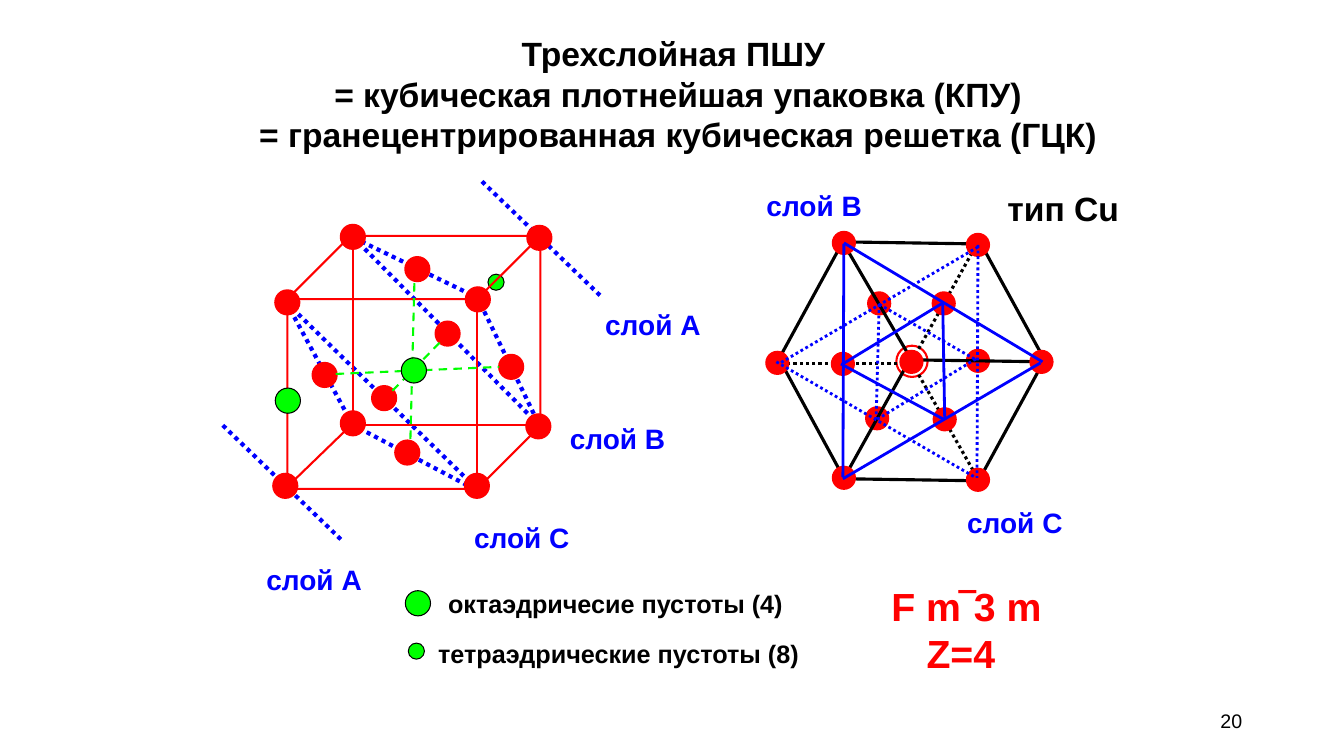
from dataclasses import dataclass

from lxml import etree
from pptx import Presentation
from pptx.dml.color import RGBColor
from pptx.enum.dml import MSO_LINE
from pptx.enum.shapes import MSO_CONNECTOR, MSO_SHAPE
from pptx.enum.text import MSO_ANCHOR, MSO_AUTO_SIZE, PP_ALIGN
from pptx.oxml.ns import qn
from pptx.util import Emu, Pt

ELLIPSE, CUBE = MSO_SHAPE.OVAL, MSO_SHAPE.CUBE
STRAIGHT = MSO_CONNECTOR.STRAIGHT
DOT, DASH = MSO_LINE.ROUND_DOT, MSO_LINE.DASH
CENTER, RIGHT = PP_ALIGN.CENTER, PP_ALIGN.RIGHT
TOP, MIDDLE = MSO_ANCHOR.TOP, MSO_ANCHOR.MIDDLE
GROW, FIXED = MSO_AUTO_SIZE.SHAPE_TO_FIT_TEXT, MSO_AUTO_SIZE.NONE
EMU_PER_PX = 9144


def px(n):
    return Emu(n * EMU_PER_PX)


@dataclass(frozen=True)
class Theme:
    font: str = "Arial"
    black: str = "000000"
    red: str = "FF0000"
    green: str = "00FF00"
    blue: str = "0000FF"
    formula: int = 28
    title: int = 24
    layer: int = 20
    legend: int = 18
    number: int = 14


class SlideBuilder:
    def __init__(self, s, theme):
        self.s = s
        self.theme = theme

    def outline(self, line, color, width, dash=None):
        line.color.rgb = RGBColor.from_string(color)
        line.width = Pt(width)
        if dash is not None:
            line.dash_style = dash

    def shape(self, kind, x, y, size, fill=None, line=None, width=1.5):
        sp = self.s.shapes.add_shape(kind, px(x), px(y), px(size), px(size))
        sp.shadow.inherit = False
        if fill:
            sp.fill.solid()
            sp.fill.fore_color.rgb = RGBColor.from_string(fill)
        else:
            sp.fill.background()
        if line:
            self.outline(sp.line, line, width)
        else:
            sp.line.fill.background()
        return sp

    def atoms(self, places, size):
        for x, y in places:
            self.shape(ELLIPSE, x, y, size, fill=self.theme.red)

    def void(self, x, y, size):
        self.shape(ELLIPSE, x, y, size, fill=self.theme.green, line=self.theme.black, width=0.75)

    def lines(self, ends, color, width, dash=None):
        for x1, y1, x2, y2 in ends:
            c = self.s.shapes.add_connector(STRAIGHT, px(x1), px(y1), px(x2), px(y2))
            self.outline(c.line, color, width, dash)
            etree.SubElement(c._element.spPr, qn("a:effectLst"))

    def text(self, text, x, y, w, h, *, size, color, bold=True, align=CENTER,
             anchor=TOP, wrap=False):
        tf = self.s.shapes.add_textbox(px(x), px(y), px(w), px(h)).text_frame
        tf.word_wrap = wrap
        tf.auto_size = FIXED if wrap else GROW
        tf.vertical_anchor = anchor
        for i, row in enumerate(text.split("\n")):
            p = tf.add_paragraph() if i else tf.paragraphs[0]
            p.alignment = align
            r = p.add_run()
            r.text = row
            r.font.name = self.theme.font
            r.font.size = Pt(size)
            r.font.bold = bold
            r.font.color.rgb = RGBColor.from_string(color)

    def layer(self, name, x, y):
        self.text(name, x, y, 115, 43, size=self.theme.layer, color=self.theme.blue)


def draw_headings(b):
    t = b.theme
    b.text("Трехслойная ПШУ \n= кубическая плотнейшая упаковка (КПУ)\n"
           "= гранецентрированная кубическая решетка (ГЦК)",
           243, 28, 859, 131, size=t.title, color=t.black)
    b.text("тип Cu", 989, 182, 131, 50, size=t.title, color=t.black)
    b.text(" F m‾3 m\nZ=4", 859, 573, 188, 104, size=t.formula, color=t.red)
    b.text("20", 942, 695, 300, 40, size=t.number, color=t.black, bold=False,
           align=RIGHT, anchor=MIDDLE, wrap=True)


def draw_cube(b):
    t = b.theme
    b.void(484, 272, 16)
    layer_planes = [
        (284, 300, 474, 486), (349, 421, 472, 486), (284, 300, 349, 420),
        (351, 236, 473, 295), (473, 294, 535, 422), (350, 235, 534, 421),
        (221, 422, 338, 535), (478, 180, 595, 293),
    ]
    b.lines(layer_planes, t.blue, 3, DOT)
    b.shape(CUBE, 285, 234, 251, line=t.red).adjustments[0] = 0.25
    hidden_edges = [(350, 234, 350, 422), (350, 422, 535, 422), (350, 420, 286, 482)]
    b.lines(hidden_edges, t.red, 1.5)
    corners = [(337, 222), (522, 223), (272, 287), (461, 284),
               (337, 407), (521, 410), (460, 469), (270, 469)]
    face_centres = [(368, 382), (309, 359), (391, 436), (431, 318), (401, 254), (494, 351)]
    b.atoms(corners + face_centres, 26)
    void_axes = [(333, 371, 495, 364), (411, 281, 407, 438), (436, 340, 386, 391)]
    b.lines(void_axes, t.green, 1.5, DASH)
    for x, y in [(273, 385), (398, 355)]:
        b.void(x, y, 25)
    for name, x, y in [("слой C", 460, 511), ("слой B", 555, 413),
                       ("слой А", 254, 553), ("слой А", 590, 300)]:
        b.layer(name, x, y)


def draw_hexagon(b):
    t = b.theme
    b.shape(ELLIPSE, 889, 343, 31, line=t.red)
    b.atoms([(858, 403), (958, 346), (860, 289)], 24)
    solid_edges = [
        (837, 242, 904, 357), (900, 361, 834, 480), (902, 357, 1039, 359),
        (839, 240, 968, 242), (841, 475, 970, 477), (973, 242, 1036, 357),
        (776, 362, 839, 478), (837, 238, 771, 359), (1036, 357, 970, 478),
    ]
    hidden_edges = [(905, 361, 971, 477), (970, 240, 904, 359), (902, 361, 768, 361)]
    b.lines(solid_edges, t.black, 2.25)
    b.lines(hidden_edges, t.black, 2.25, DOT)
    b.atoms([(892, 347), (958, 231), (759, 348), (958, 464), (925, 404),
             (824, 349), (924, 289), (1021, 347), (825, 229), (825, 462)], 24)
    layer_b = [
        (837, 242, 836, 473), (1032, 360, 836, 475), (837, 241, 1034, 359),
        (836, 361, 936, 300), (937, 415, 935, 301), (834, 361, 936, 416),
    ]
    layer_c = [
        (970, 245, 774, 360), (770, 359, 968, 474), (970, 243, 969, 474),
        (872, 302, 869, 415), (872, 302, 968, 357), (870, 416, 968, 356),
    ]
    b.lines(layer_b, t.blue, 2)
    b.lines(layer_c, t.blue, 2, DOT)
    b.layer("слой B", 750, 182)
    b.layer("слой C", 949, 497)


def draw_legend(b):
    t = b.theme
    b.void(402, 586, 25)
    b.void(405, 638, 16)
    b.text("октаэдричесие пустоты (4)", 427, 579, 367, 40, size=t.legend, color=t.black)
    b.text("тетраэдрические пустоты (8)", 423, 628, 381, 40, size=t.legend, color=t.black)


def main():
    prs = Presentation()
    prs.slide_width, prs.slide_height = px(1333), px(750)
    b = SlideBuilder(prs.slides.add_slide(prs.slide_layouts[6]), Theme())
    draw_headings(b)
    draw_cube(b)
    draw_hexagon(b)
    draw_legend(b)
    prs.save("out.pptx")


if __name__ == "__main__":
    main()
